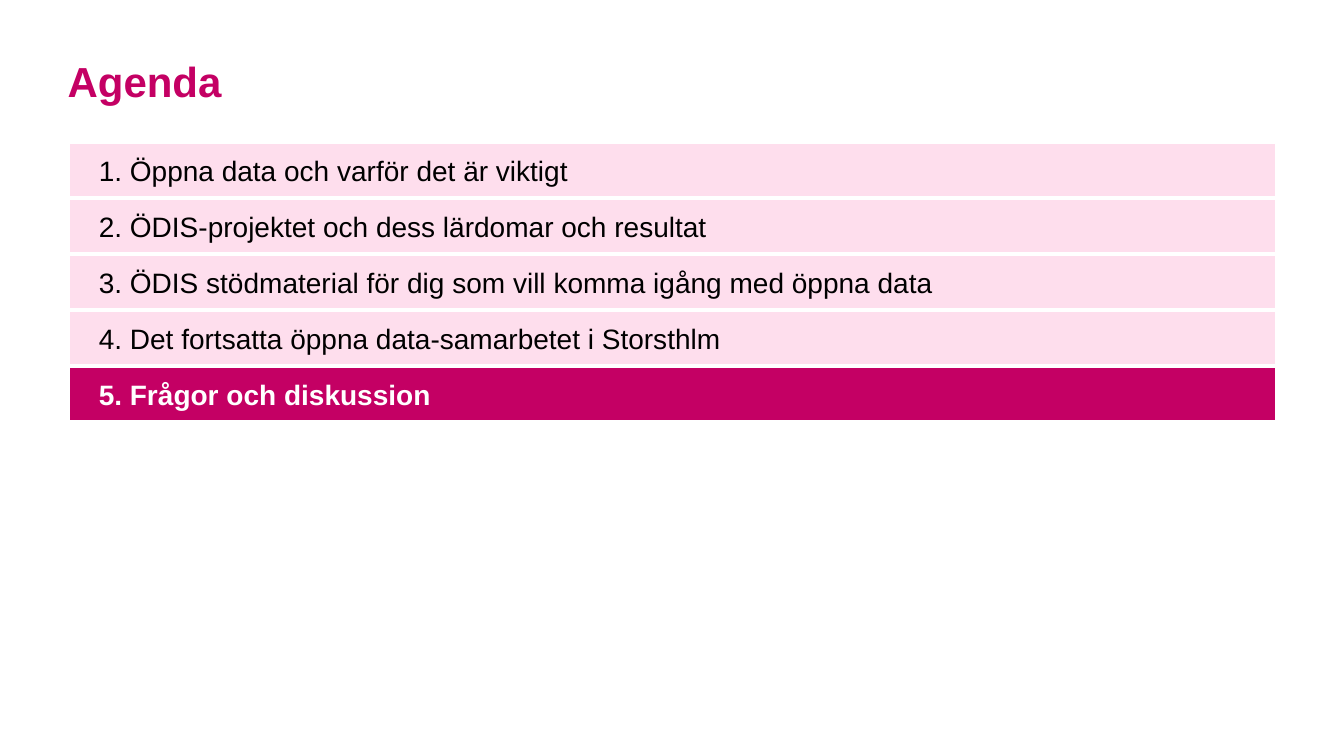
from dataclasses import dataclass

from pptx import Presentation
from pptx import util as u
from pptx.dml.color import RGBColor
from pptx.enum import shapes, text
from pptx.slide import Slide

MAGENTA = RGBColor(0xC4, 0x00, 0x64)
PINK = RGBColor(0xFE, 0xDE, 0xED)
BLACK = RGBColor(0x00, 0x00, 0x00)
WHITE = RGBColor(0xFF, 0xFF, 0xFF)

FONT = "Arial"
LEFT, WIDTH = u.Inches(0.67), u.Inches(12)
AGENDA_TOP, AGENDA_HEIGHT = u.Inches(1.41), u.Inches(2.78)


@dataclass
class AgendaItem:
    topic: str
    current: bool = False


AGENDA = [
    AgendaItem("Öppna data och varför det är viktigt"),
    AgendaItem("ÖDIS-projektet och dess lärdomar och resultat"),
    AgendaItem("ÖDIS stödmaterial för dig som vill komma igång med öppna data"),
    AgendaItem("Det fortsatta öppna data-samarbetet i Storsthlm"),
    AgendaItem("Frågor och diskussion", current=True),
]


def set_insets(frame, left: float, top: float, right: float, bottom: float) -> None:
    frame.margin_left, frame.margin_top = u.Inches(left), u.Inches(top)
    frame.margin_right, frame.margin_bottom = u.Inches(right), u.Inches(bottom)


def add_run(paragraph, words: str, size: int, color: RGBColor, bold: bool) -> None:
    run = paragraph.add_run()
    run.text = words
    run.font.name = FONT
    run.font.size = u.Pt(size)
    run.font.bold = bold
    run.font.color.rgb = color


def add_title(slide: Slide, words: str) -> None:
    title = slide.shapes.title
    title.left, title.top = LEFT, u.Inches(0.5)
    title.width, title.height = WIDTH, u.Inches(0.91)
    frame = title.text_frame
    set_insets(frame, 0, 0, 0, 0)
    frame.vertical_anchor = text.MSO_ANCHOR.TOP
    heading = frame.paragraphs[0]
    heading.alignment = text.PP_ALIGN.LEFT
    heading.line_spacing = 1.1
    add_run(heading, words, 30, MAGENTA, True)


def add_agenda_bar(slide: Slide, index: int, item: AgendaItem) -> None:
    pitch = AGENDA_HEIGHT // len(AGENDA)
    bar = slide.shapes.add_shape(
        shapes.MSO_SHAPE.RECTANGLE, LEFT, AGENDA_TOP + index * pitch, WIDTH, pitch)
    bar.shadow.inherit = False
    bar.fill.solid()
    bar.fill.fore_color.rgb = MAGENTA if item.current else PINK
    bar.line.color.rgb = WHITE
    bar.line.width = u.Pt(3)

    frame = bar.text_frame
    frame.word_wrap = False
    frame.vertical_anchor = text.MSO_ANCHOR.MIDDLE
    set_insets(frame, 0.11, 0.11, 0, 0.11)
    entry = frame.paragraphs[0]
    entry.alignment = text.PP_ALIGN.LEFT
    # Left indent of the entry
    entry_properties = entry._p.get_or_add_pPr()
    entry_properties.set("marL", str(u.Inches(0.2)))
    entry_properties.set("indent", "0")
    add_run(entry, f"{index + 1}. {item.topic}", 20,
            WHITE if item.current else BLACK, item.current)


def main() -> None:
    deck = Presentation()
    deck.slide_width, deck.slide_height = u.Inches(13.33), u.Inches(7.5)
    slide = deck.slides.add_slide(deck.slide_layouts.get_by_name("Title Only"))

    # Heading
    add_title(slide, "Agenda")

    # Agenda bars
    for index, item in enumerate(AGENDA):
        add_agenda_bar(slide, index, item)

    deck.save("out.pptx")


if __name__ == "__main__":
    main()
